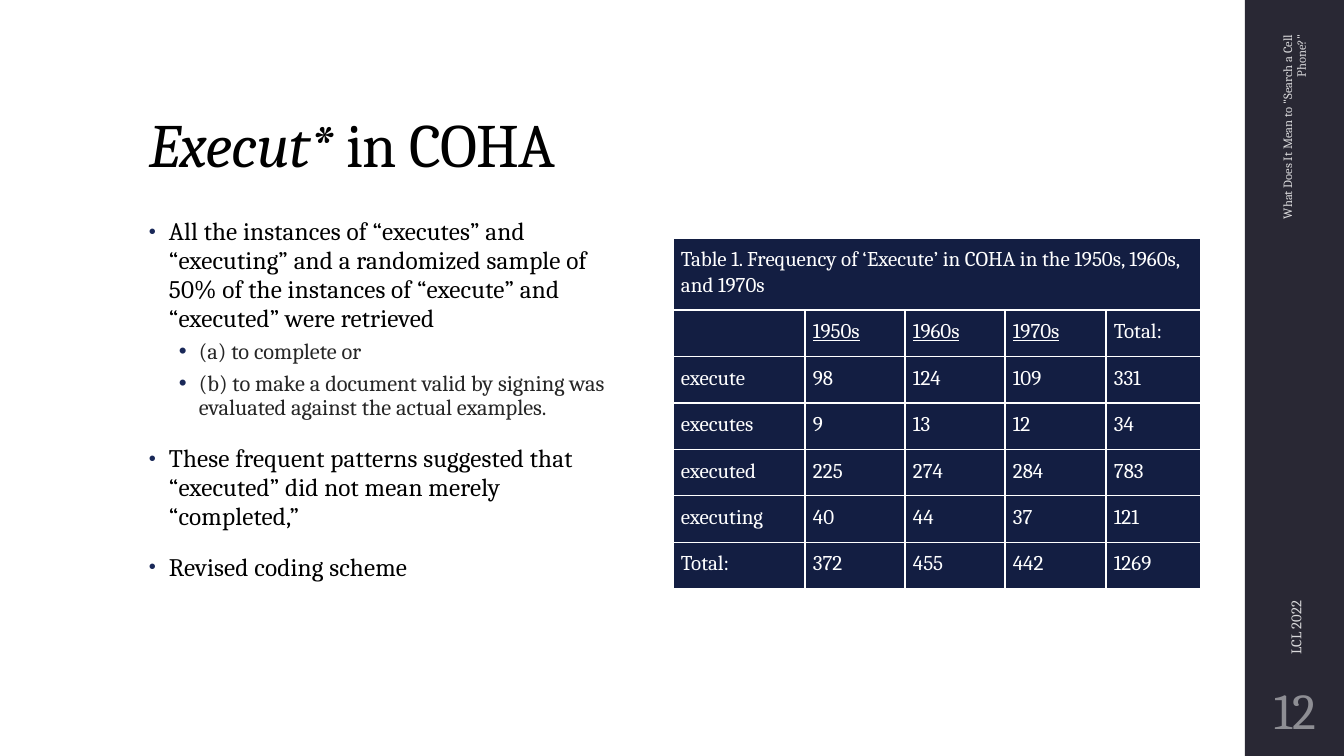
import pptx
import pptx.dml.color
import pptx.enum.shapes
import pptx.enum.text
import pptx.oxml
import pptx.oxml.ns
import pptx.util
import lxml.etree

FONT = "Cambria"
BLACK, GREY, WHITE = "000000", "262626", "FFFFFF"
SIDEBAR, FOOTER, NUMBER = "292834", "D9D9DB", "8E8E94"
BULLET, CELL = "192858", "131E42"

TITLE = [("Execut* ", {"italic": True}), ("in COHA", {})]
BODY = [
    (0, "All the instances of “executes” and “executing” and a randomized sample of 50% of the instances of “execute” and “executed” were retrieved"),
    (1, "(a) to complete or"),
    (1, "(b) to make a document valid by signing was evaluated against the actual examples."),
    (0, "These frequent patterns suggested that “executed” did not mean merely “completed,”"),
    (0, "Revised coding scheme"),
]
LEVELS = [
    {"size": 18, "color": BLACK, "tracking": 10, "line": 0.95, "before": 14, "after": 2,
     "margin": 20, "bullet_size": 80},
    {"size": 16, "color": GREY, "line": 0.9, "before": 3, "after": 3,
     "margin": 50, "bullet_size": 100},
]
TABLE_TITLE = "Table 1. Frequency of ‘Execute’ in COHA in the 1950s, 1960s, and 1970s"
DECADES = ["1950s", "1960s", "1970s"]
ROWS = [
    ["", *DECADES, "Total:"],
    ["execute", "98", "124", "109", "331"],
    ["executes", "9", "13", "12", "34"],
    ["executed", "225", "274", "284", "783"],
    ["executing", "40", "44", "37", "121"],
    ["Total:", "372", "455", "442", "1269"],
]
COLUMN_WIDTHS = [132, 100, 100, 101, 95]
TABLE_LEFT, TABLE_TOP, TABLE_HEIGHT, TABLE_TITLE_HEIGHT = 673, 238, 351, 72
CELL_INSET = 8

ALIGN = pptx.enum.text.PP_ALIGN
ANCHOR = pptx.enum.text.MSO_ANCHOR


def px(value):
    return pptx.util.Emu(round(value * 914400 / 100.8))


def rgb(color):
    return pptx.dml.color.RGBColor.from_string(color)


def add_bullet(paragraph, margin, size):
    properties = paragraph._p.get_or_add_pPr()
    properties.set("marL", str(px(margin)))
    properties.set("indent", str(-px(20)))
    color = lxml.etree.SubElement(properties, pptx.oxml.ns.qn("a:buClr"))
    lxml.etree.SubElement(color, pptx.oxml.ns.qn("a:srgbClr"), val=BULLET)
    lxml.etree.SubElement(properties, pptx.oxml.ns.qn("a:buSzPct"), val=str(size * 1000))
    lxml.etree.SubElement(properties, pptx.oxml.ns.qn("a:buFont"), typeface="Arial")
    lxml.etree.SubElement(properties, pptx.oxml.ns.qn("a:buChar"), char="•")


def write(paragraph, text, size, color, tracking=0, line=1.0, before=0, after=0,
          align=ALIGN.LEFT, underline=False, margin=None, bullet_size=100):
    paragraph.alignment = align
    paragraph.line_spacing = line
    paragraph.space_before = pptx.util.Pt(before)
    paragraph.space_after = pptx.util.Pt(after)
    if margin is not None:
        add_bullet(paragraph, margin, bullet_size)
    for words, style in [(text, {})] if isinstance(text, str) else text:
        run = paragraph.add_run()
        run.text = words
        run.font.name = FONT
        run.font.size = pptx.util.Pt(size)
        run.font.color.rgb = rgb(color)
        run.font.italic = style.get("italic", False)
        run.font.underline = underline
        if tracking:
            run._r.get_or_add_rPr().set("spc", str(tracking))


def add_box(slide, left, top, width, height, anchor=ANCHOR.TOP, rotation=0, inset=None):
    shape = slide.shapes.add_textbox(px(left), px(top), px(width), px(height))
    shape.rotation = rotation
    frame = shape.text_frame
    frame.word_wrap = True
    frame.vertical_anchor = anchor
    if inset is not None:
        frame.margin_left = frame.margin_right = px(inset)
        frame.margin_top = frame.margin_bottom = px(inset)
    return frame


def format_cell(cell, text, underline=False):
    cell.fill.solid()
    cell.fill.fore_color.rgb = rgb(CELL)
    cell.margin_left = cell.margin_right = px(CELL_INSET)
    cell.margin_top = cell.margin_bottom = px(CELL_INSET)
    write(cell.text_frame.paragraphs[0], text, 15, WHITE, line=1.07, underline=underline)
    properties = cell._tc.get_or_add_tcPr()
    for index, side in enumerate(("lnL", "lnR", "lnT", "lnB")):
        properties.insert(index, pptx.oxml.parse_xml(
            f'<a:{side} {pptx.oxml.ns.nsdecls("a")} w="12700"><a:solidFill>'
            f'<a:srgbClr val="{WHITE}"/></a:solidFill></a:{side}>'))


def add_frequency_table(slide):
    table = slide.shapes.add_table(
        len(ROWS) + 1, len(COLUMN_WIDTHS), px(TABLE_LEFT), px(TABLE_TOP),
        px(sum(COLUMN_WIDTHS)), px(TABLE_HEIGHT)).table
    table.first_row = False
    table.horz_banding = False
    for column, width in zip(table.columns, COLUMN_WIDTHS):
        column.width = px(width)
    for row in table.rows:
        row.height = px((TABLE_HEIGHT - TABLE_TITLE_HEIGHT) / len(ROWS))
    table.rows[0].height = px(TABLE_TITLE_HEIGHT)
    table.cell(0, 0).merge(table.cell(0, len(COLUMN_WIDTHS) - 1))
    format_cell(table.cell(0, 0), TABLE_TITLE)
    for row_index, values in enumerate(ROWS, 1):
        for column_index, value in enumerate(values):
            format_cell(table.cell(row_index, column_index), value, value in DECADES)


def main():
    presentation = pptx.Presentation()
    presentation.slide_width, presentation.slide_height = px(1344), px(756)
    slide = presentation.slides.add_slide(presentation.slide_layouts[6])

    sidebar = slide.shapes.add_shape(
        pptx.enum.shapes.MSO_SHAPE.RECTANGLE, px(1245), 0, px(99), px(756))
    sidebar.shadow.inherit = False
    sidebar.fill.solid()
    sidebar.fill.fore_color.rgb = rgb(SIDEBAR)
    sidebar.line.fill.background()

    title = add_box(slide, 139, 40, 1068, 146, ANCHOR.BOTTOM)
    write(title.paragraphs[0], TITLE, 44, BLACK, tracking=-50, line=0.9)

    body = add_box(slide, 139, 213, 485, 468)
    for index, (level, text) in enumerate(BODY):
        paragraph = body.add_paragraph() if index else body.paragraphs[0]
        paragraph.level = level
        write(paragraph, text, **LEVELS[level])

    footer = add_box(slide, 1190, 110, 210, 40, ANCHOR.MIDDLE, rotation=270)
    write(footer.paragraphs[0], 'What Does It Mean to "Search a Cell Phone?"', 9, FOOTER,
          line=0.9, after=6, align=ALIGN.RIGHT)
    event = add_box(slide, 1098, 447, 395, 40, ANCHOR.MIDDLE, rotation=270)
    write(event.paragraphs[0], "LCL 2022", 10.5, FOOTER, after=6)
    number = add_box(slide, 1245, 680, 100, 66, ANCHOR.MIDDLE, inset=5)
    write(number.paragraphs[0], "12", 36, NUMBER, line=0.9, after=6, align=ALIGN.CENTER)

    add_frequency_table(slide)
    presentation.save("out.pptx")


if __name__ == "__main__":
    main()
